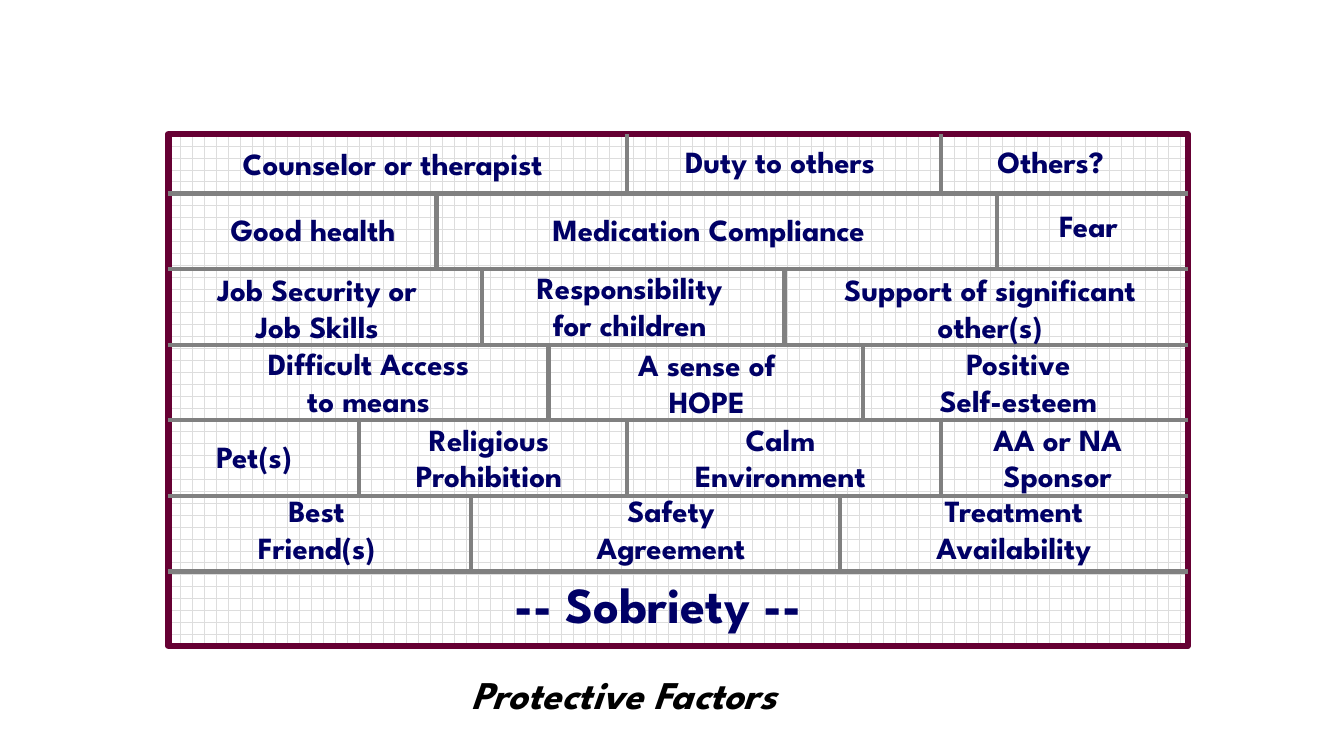
from pptx import Presentation
from pptx.dml.color import RGBColor
from pptx.enum.dml import MSO_PATTERN
from pptx.enum.shapes import MSO_CONNECTOR, MSO_SHAPE
from pptx.enum.text import MSO_AUTO_SIZE, PP_ALIGN
from pptx.oxml.ns import qn
from pptx.util import Inches, Pt
from lxml import etree

COLORS = {"wall": "660033", "brick": "DDDDDD", "paper": "FFFFFF",
          "joint": "808080", "label": "000066", "caption": "000000"}
FONT = "League Spartan"
WALL_LEFT, WALL_TOP, WALL_WIDTH, WALL_HEIGHT = 1.67, 1.33, 10.11, 5.08
WALL_RIGHT = WALL_LEFT + WALL_WIDTH
FIRST_JOINT, ROW_HEIGHT = 1.92, 0.75

deck = Presentation()
deck.slide_width, deck.slide_height = Inches(13.33), Inches(7.5)
page = deck.slides.add_slide(deck.slide_layouts[6])


def add_joint(x1, y1, x2, y2):
    joint = page.shapes.add_connector(
        MSO_CONNECTOR.STRAIGHT, Inches(x1), Inches(y1), Inches(x2), Inches(y2))
    joint.line.color.rgb = RGBColor.from_string(COLORS["joint"])
    joint.line.width = Pt(3)
    etree.SubElement(joint._element.spPr, qn("a:effectLst"))


def add_label(lines, left, top, width, height, size=22, color="label",
              align=PP_ALIGN.CENTER, italic=None, wrap=False):
    box = page.shapes.add_textbox(Inches(left), Inches(top), Inches(width), Inches(height))
    frame = box.text_frame
    frame.word_wrap = wrap
    frame.auto_size = MSO_AUTO_SIZE.SHAPE_TO_FIT_TEXT
    for number, line in enumerate(lines):
        para = frame.add_paragraph() if number else frame.paragraphs[0]
        para.alignment = align
        span = para.add_run()
        span.text = line
        span.font.name = FONT
        span.font.size = Pt(size)
        span.font.bold = True
        span.font.italic = italic
        span.font.color.rgb = RGBColor.from_string(COLORS[color])


# Wall
wall = page.shapes.add_shape(MSO_SHAPE.RECTANGLE, Inches(WALL_LEFT), Inches(WALL_TOP),
                             Inches(WALL_WIDTH), Inches(WALL_HEIGHT))
wall.shadow.inherit = False
wall.fill.patterned()
wall.fill.pattern = MSO_PATTERN.HORIZONTAL_BRICK
wall.fill.fore_color.rgb = RGBColor.from_string(COLORS["brick"])
wall.fill.back_color.rgb = RGBColor.from_string(COLORS["paper"])
wall.line.color.rgb = RGBColor.from_string(COLORS["wall"])
wall.line.width = Pt(4.5)

# Joints: each row lists the places of its upright joints
upright_joints = [(6.22, 9.33), (4.33, 9.89), (4.78, 7.78),
                  (5.44, 8.56), (3.56, 6.22, 9.33), (4.67, 8.33)]
row_top = WALL_TOP
for row, places in enumerate(upright_joints):
    row_bottom = FIRST_JOINT + row * ROW_HEIGHT
    add_joint(WALL_LEFT, row_bottom, WALL_RIGHT, row_bottom)
    for x in places:
        add_joint(x, row_top, x, row_bottom)
    row_top = row_bottom

# Bricks with one line: text, left, top, width
single_bricks = [
    ("Counselor or therapist", 2.16, 1.39, 3.47),
    ("Duty to others", 6.61, 1.37, 2.25),
    ("Others?", 9.75, 1.37, 1.34),
    ("Good health", 2.06, 2.04, 2.09),
    ("Medication Compliance", 5.1, 2.04, 3.86),
    ("Fear", 10.37, 2, 0.85),
    ("Pet(s)", 2, 4.29, 1.04),
]
for text, left, top, width in single_bricks:
    add_label([text], left, top, width, 0.47)

# Bricks with two lines: first line, second line, left, top, width
double_bricks = [
    ("Job Security or", "Job Skills", 1.94, 2.64, 2.41),
    ("Responsibility", "for children", 5.14, 2.62, 2.21),
    ("Support of significant", "other(s)", 8.12, 2.64, 3.4),
    ("Difficult Access", "to means", 2.42, 3.37, 2.47),
    ("A sense of", "HOPE", 6.14, 3.38, 1.74),
    ("Positive", "Self-esteem", 9.12, 3.37, 1.96),
    ("Religious", "Prohibition", 3.97, 4.12, 1.76),
    ("Calm", "Environment", 6.72, 4.12, 2.04),
    ("AA or NA", "Sponsor", 9.7, 4.12, 1.58),
    ("Best", "Friend(s)", 2.4, 4.83, 1.48),
    ("Safety", "Agreement", 5.71, 4.83, 1.89),
]
for first, second, left, top, width in double_bricks:
    add_label([first, second], left, top, width, 0.84)
add_label(["Treatment", "Availability"], 8.11, 4.83, 3.89, 0.83, wrap=True)

# Foundation and caption
add_label(["-- Sobriety --"], 5, 5.64, 3.3, 0.71, size=36, align=PP_ALIGN.LEFT)
add_label(["Protective Factors"], 4.58, 6.6, 3.58, 0.57, size=28, color="caption",
          align=PP_ALIGN.LEFT, italic=True)

deck.save("out.pptx")
